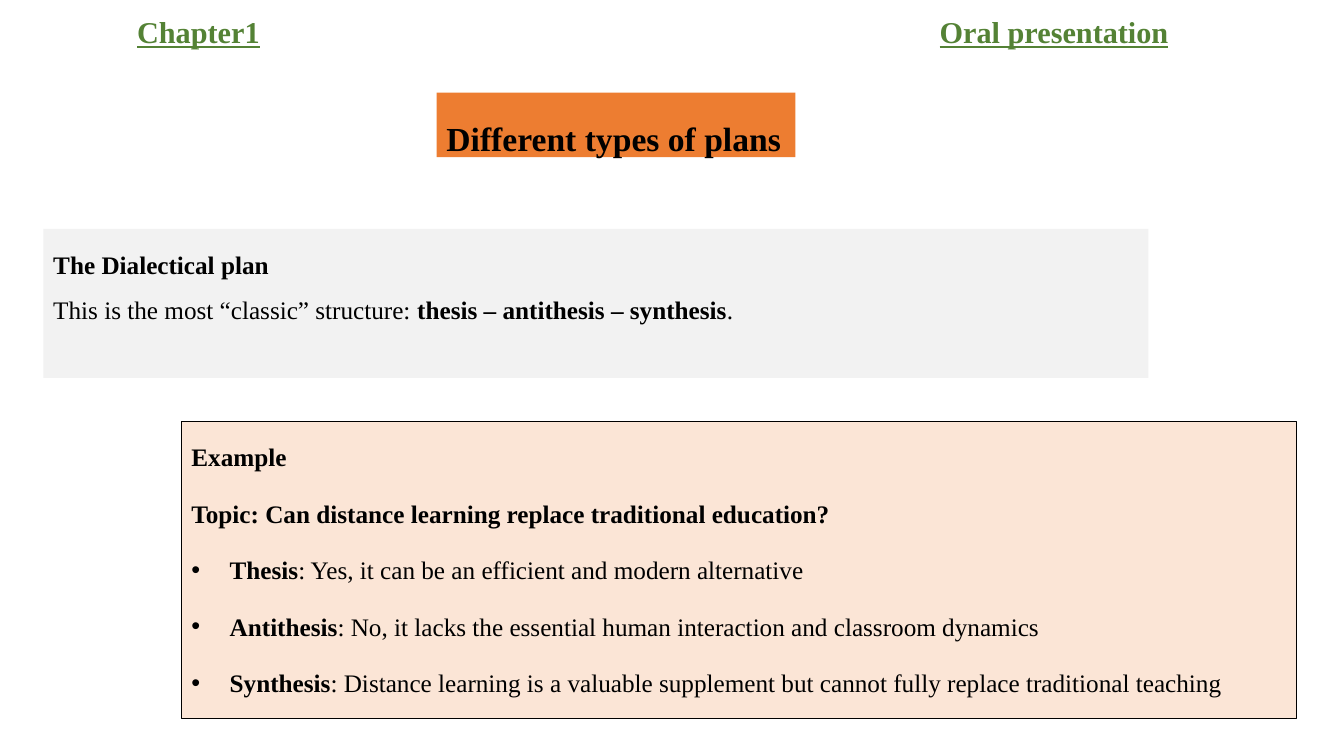
from lxml.etree import SubElement
from pptx import Presentation
from pptx.dml.color import RGBColor
from pptx.enum.shapes import MSO_SHAPE
from pptx.enum.text import MSO_ANCHOR, PP_ALIGN
from pptx.oxml.ns import qn
from pptx.util import Inches, Pt


def color(value):
    return RGBColor.from_string(value)


def add_text(paragraph, text, size=18, font="Times New Roman", fill="000000", bold=False, underline=False):
    for position, line in enumerate(text.split("\n")):
        if position:
            paragraph.add_line_break()
        if line:
            run = paragraph.add_run()
            run.text = line
            run.font.size = Pt(size)
            run.font.name = font
            run.font.color.rgb = color(fill)
            run.font.bold = bold
            run.font.underline = underline


class PlanSlide:
    green = "548235"
    orange = "ED7D31"
    gray = "F2F2F2"
    peach = "FBE5D6"
    black = "000000"
    bullet_indent = Inches(0.38)

    def __init__(self, presentation):
        self.slide = presentation.slides.add_slide(presentation.slide_layouts[6])

    def header(self, left, top, width, height, chapter, subject, tab):
        shape = self.slide.shapes.add_textbox(Inches(left), Inches(top), Inches(width), Inches(height))
        frame = shape.text_frame
        frame.word_wrap = True
        frame.vertical_anchor = MSO_ANCHOR.MIDDLE
        frame.margin_left = frame.margin_right = 0
        paragraph = frame.paragraphs[0]
        paragraph.line_spacing = 0.9
        tabs = SubElement(paragraph._p.get_or_add_pPr(), qn("a:tabLst"))
        SubElement(tabs, qn("a:tab"), pos=str(Inches(tab)), algn="r")
        add_text(paragraph, f"{chapter}\t{subject}", size=21.6, fill=self.green, bold=True, underline=True)

    def panel(self, left, top, width, height, fill, line=None, wrap=True):
        shape = self.slide.shapes.add_shape(
            MSO_SHAPE.RECTANGLE, Inches(left), Inches(top), Inches(width), Inches(height))
        shape.shadow.inherit = False
        shape.fill.solid()
        shape.fill.fore_color.rgb = color(fill)
        if line:
            shape.line.color.rgb = color(line)
            shape.line.width = Pt(0.75)
        else:
            shape.line.fill.background()
        shape.text_frame.word_wrap = wrap
        shape.text_frame.vertical_anchor = MSO_ANCHOR.TOP
        return shape.text_frame

    def paragraph(self, frame, runs, size=18, align=PP_ALIGN.JUSTIFY, bullet=False):
        paragraph = frame.paragraphs[0] if not frame.text else frame.add_paragraph()
        paragraph.alignment = align
        paragraph.line_spacing = 1.5
        paragraph.space_after = Pt(8)
        if bullet:
            properties = paragraph._p.get_or_add_pPr()
            properties.set("marL", str(self.bullet_indent))
            properties.set("indent", str(-self.bullet_indent))
            SubElement(properties, qn("a:buFont"), typeface="Arial")
            SubElement(properties, qn("a:buChar"), char="•")
        for text, bold in runs:
            add_text(paragraph, text, size=size, bold=bold)


def main():
    presentation = Presentation()
    presentation.slide_width = Inches(13.33)
    presentation.slide_height = Inches(7.5)
    plan = PlanSlide(presentation)

    plan.header(1.36, 0.16, 10.5, 0.35, "Chapter1", "Oral presentation", tab=10.23)

    title = plan.panel(4.33, 0.92, 3.56, 0.64, plan.orange, wrap=False)
    plan.paragraph(title, [("Different types of plans", True)], size=24)

    definition = plan.panel(0.43, 2.27, 10.96, 1.48, plan.gray)
    plan.paragraph(definition, [
        ("The Dialectical plan\n", True),
        ("This is the most “classic” structure: ", False),
        ("thesis – antithesis – synthesis", True),
        (".", False),
    ], align=PP_ALIGN.LEFT)

    example = plan.panel(1.8, 4.18, 11.06, 2.95, plan.peach, line=plan.black)
    for heading in ("Example", "Topic: Can distance learning replace traditional education?"):
        plan.paragraph(example, [(heading, True)])
    arguments = [
        ("Thesis", "Yes, it can be an efficient and modern alternative"),
        ("Antithesis", "No, it lacks the essential human interaction and classroom dynamics"),
        ("Synthesis", "Distance learning is a valuable supplement but cannot fully replace traditional teaching"),
    ]
    for part, claim in arguments:
        plan.paragraph(example, [(part, True), (f": {claim}", False)], bullet=True)

    presentation.save("out.pptx")


if __name__ == "__main__":
    main()
